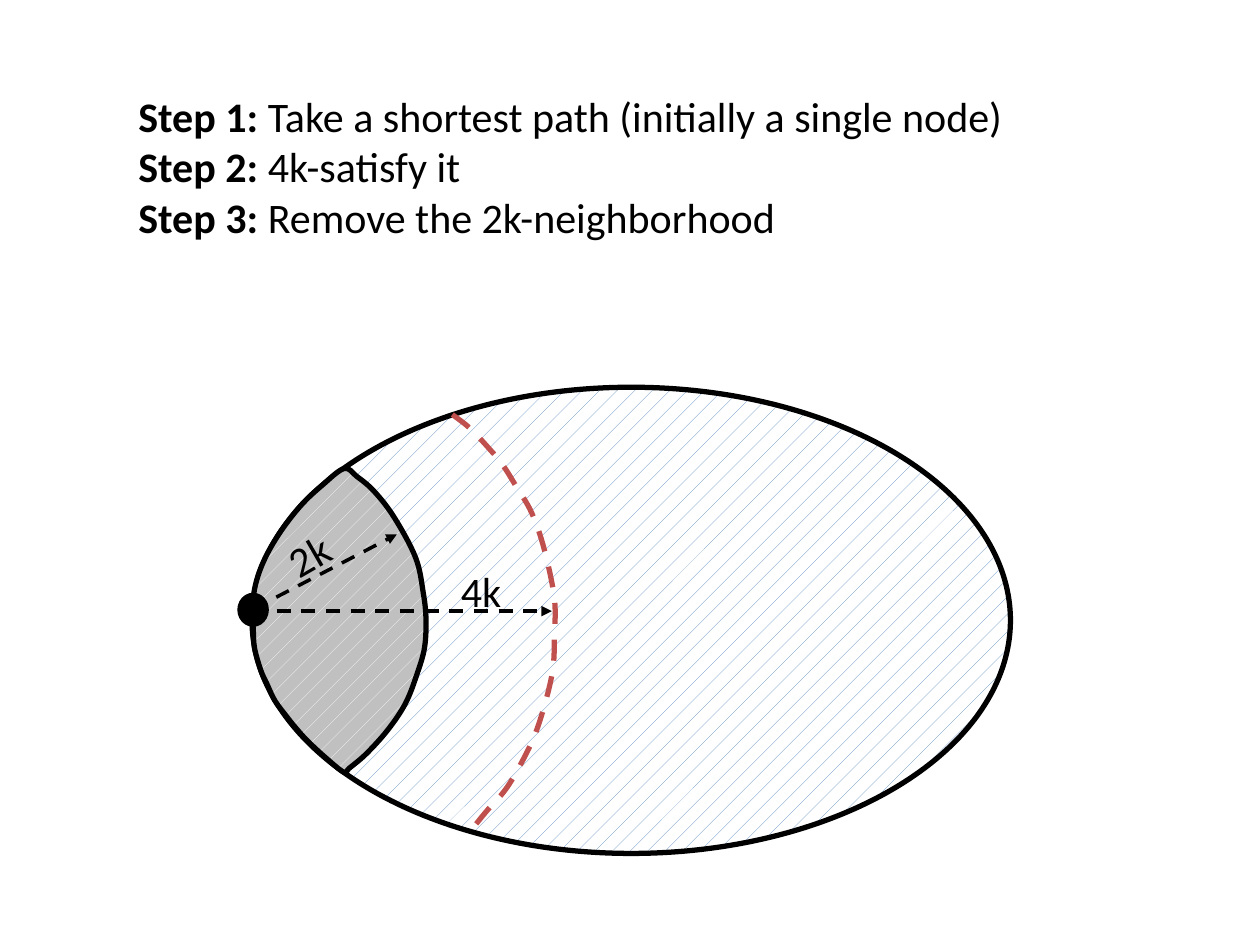
from dataclasses import dataclass
from lxml.etree import SubElement
from pptx import Presentation
from pptx.dml.color import RGBColor as RGB
from pptx.enum.dml import MSO_LINE as DASH, MSO_PATTERN as PATTERN
from pptx.enum.shapes import MSO_CONNECTOR as CONN, MSO_SHAPE as SHAPE
from pptx.enum.text import MSO_AUTO_SIZE as FIT
from pptx.oxml.ns import qn
from pptx.util import Pt


@dataclass(frozen=True)
class Theme:
    font: str = "Calibri"
    size: float = 24
    black: RGB = RGB(0, 0, 0)
    white: RGB = RGB(255, 255, 255)
    blue: RGB = RGB(0x4F, 0x81, 0xBD)
    gray: RGB = RGB(0xC0, 0xC0, 0xC0)
    red: RGB = RGB(0xC0, 0x50, 0x4D)
    thin: float = 0.75
    medium: float = 2
    thick: float = 3


class Deck:
    def __init__(self, theme, width, height):
        self.theme = theme
        self.prs = Presentation()
        self.prs.slide_width, self.prs.slide_height = Pt(width), Pt(height)
        self.slide = self.prs.slides.add_slide(self.prs.slide_layouts[6])
        self.shapes = self.slide.shapes

    def group(self):
        self.shapes = self.slide.shapes.add_group_shape().shapes

    def stroke(self, sp, color, width, dash=None):
        sp.line.color.rgb = color
        sp.line.width = Pt(width)
        if dash:
            sp.line.dash_style = dash

    def paint(self, sp, fore=None, back=None):
        sp.shadow.inherit = False
        if back is not None:
            sp.fill.patterned()
            sp.fill.pattern = PATTERN.PERCENT_5
            sp.fill.fore_color.rgb, sp.fill.back_color.rgb = fore, back
        elif fore is not None:
            sp.fill.solid()
            sp.fill.fore_color.rgb = fore
        else:
            sp.fill.background()

    def text(self, x, y, w, h, paragraphs, rotation=0):
        sp = self.shapes.add_textbox(Pt(x), Pt(y), Pt(w), Pt(h))
        sp.rotation = rotation
        tf = sp.text_frame
        tf.word_wrap = True
        tf.auto_size = FIT.SHAPE_TO_FIT_TEXT
        for i, runs in enumerate(paragraphs):
            p = tf.add_paragraph() if i else tf.paragraphs[0]
            for content, bold in runs:
                r = p.add_run()
                r.text = content
                r.font.name, r.font.size = self.theme.font, Pt(self.theme.size)
                r.font.bold, r.font.color.rgb = bold, self.theme.black

    def ellipse(self, x, y, w, h, width, fore, back=None):
        sp = self.shapes.add_shape(SHAPE.OVAL, Pt(x), Pt(y), Pt(w), Pt(h))
        self.paint(sp, fore, back)
        self.stroke(sp, self.theme.black, width)

    def curve(self, points, color, fore=None, back=None, dash=None):
        """Draw a freeform whose segments are smooth cubic curves through the points."""
        start, *rest = [(Pt(x), Pt(y)) for x, y in points]
        builder = self.shapes.build_freeform(*start, scale=1.0)
        builder.add_line_segments(rest, close=False)
        sp = builder.convert_to_shape()
        geometry = sp._element.spPr
        knots = [(int(pt.get("x")), int(pt.get("y"))) for pt in geometry.iter(qn("a:pt"))]
        padded = [knots[0], *knots, knots[-1]]
        for i, line in enumerate(list(geometry.iter(qn("a:lnTo")))):
            a, b, c, d = padded[i:i + 4]
            segment = SubElement(line.getparent(), qn("a:cubicBezTo"))
            leave = [q + (r - p) / 6 for p, q, r in zip(a, b, c)]
            arrive = [r - (s - q) / 6 for q, r, s in zip(b, c, d)]
            for x, y in (leave, arrive, c):
                SubElement(segment, qn("a:pt"), x=str(round(x)), y=str(round(y)))
            line.getparent().replace(line, segment)
        self.paint(sp, fore, back)
        self.stroke(sp, color, self.theme.thick, dash)

    def arrow(self, x1, y1, x2, y2):
        sp = self.shapes.add_connector(CONN.STRAIGHT, Pt(x1), Pt(y1), Pt(x2), Pt(y2))
        self.stroke(sp, self.theme.black, self.theme.medium, DASH.DASH)
        SubElement(sp.line._get_or_add_ln(), qn("a:tailEnd"), type="triangle")
        SubElement(sp._element.spPr, qn("a:effectLst"))


STEPS = [
    ("Step 1:", " Take a shortest path (initially a single node)"),
    ("Step 2:", " 4k-satisfy it"),
    ("Step 3:", " Remove the 2k-neighborhood"),
]
NEAR_REGION = [
    (144, 354.2), (145.4, 337), (150.5, 321.1), (159.8, 304.6), (172.1, 288.7),
    (184.3, 277.2), (196.6, 267.8), (203.8, 272.2), (213.8, 280.8), (225.4, 295.9),
    (237.6, 319), (241.9, 339.1), (243.4, 353.5), (242.6, 370.1), (238.3, 385.2),
    (231.8, 401.8), (221.8, 416.9), (209.5, 430.6), (199.4, 439.2), (196.6, 441.4),
    (186.5, 433.4), (175.7, 423.4), (168.5, 415.4), (163.4, 409), (157, 400.3),
    (152.6, 391), (149, 383), (145.4, 370.1), (144.7, 358.6), (144, 350.6),
]
FAR_BOUNDARY = [
    (258.5, 236.9), (268.6, 244.8), (280.1, 257), (287.3, 265.7), (294.5, 277.2),
    (303.8, 293), (311, 313.9), (316.8, 342), (316.8, 364.3), (316.1, 380.9),
    (312.5, 398.2), (306, 419), (297.4, 437), (288.7, 451.4), (277.9, 463.7), (268.6, 475.2),
]


def main():
    th = Theme()
    deck = Deck(th, 720, 540)
    deck.text(72, 48.2, 576, 122.4, [[(name, True), (action, False)] for name, action in STEPS])
    deck.group()
    deck.ellipse(144, 221.3, 433.4, 266.4, th.thick, th.blue, th.white)
    deck.curve(NEAR_REGION, th.black, fore=th.white, back=th.gray)
    deck.curve(FAR_BOUNDARY, th.red, dash=DASH.DASH)
    deck.ellipse(136, 339.1, 17.3, 18.7, th.thin, th.black)
    deck.arrow(144, 349.2, 315.4, 349.2)
    deck.arrow(145.4, 347.8, 226.8, 305.3)
    deck.text(157, 298.1, 41, 33.1, [[("2k", False)]], rotation=330)
    deck.text(256.3, 319.9, 41, 33.1, [[("4k", False)]])
    deck.prs.save("out.pptx")


if __name__ == "__main__":
    main()
